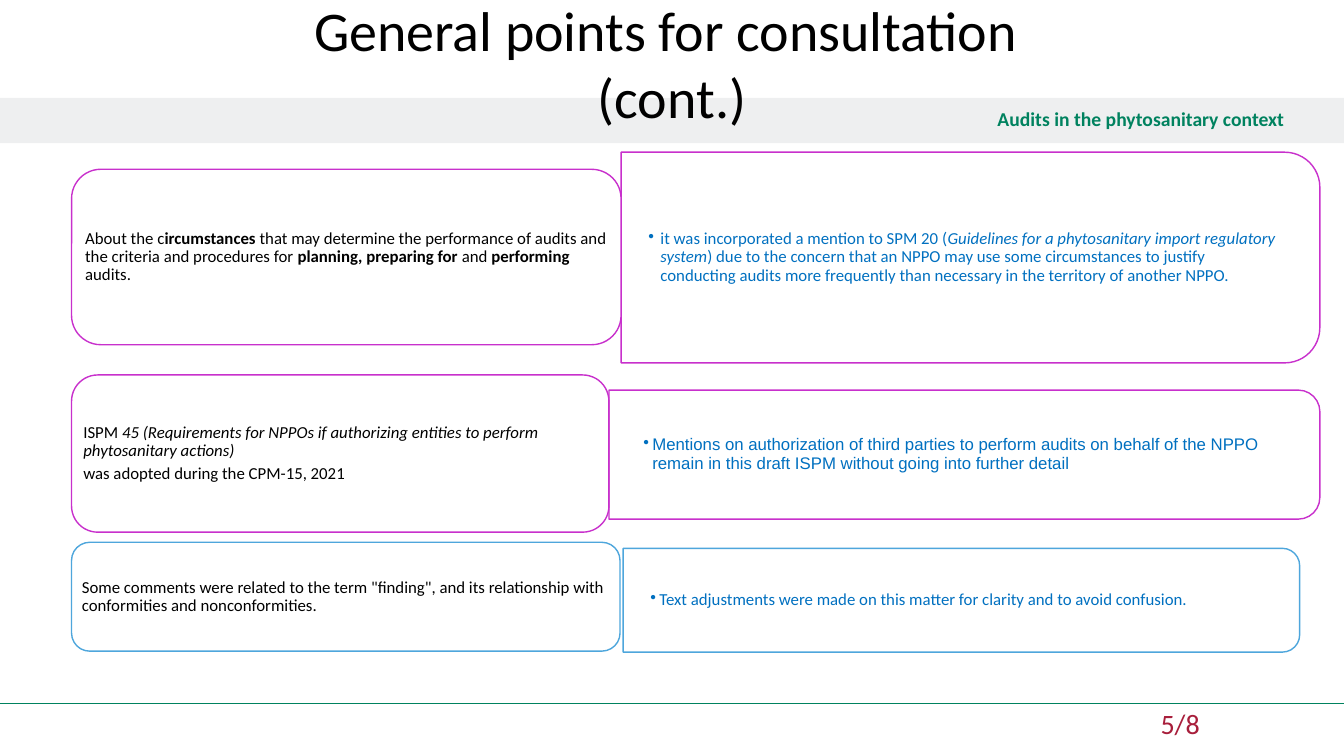
import pptx
import pptx.dml.color
import pptx.enum.shapes
import pptx.enum.text
import pptx.oxml
import pptx.oxml.ns
import pptx.util
from pptx.util import Inches

RGBColor = pptx.dml.color.RGBColor
MSO_SHAPE = pptx.enum.shapes.MSO_SHAPE
MSO_ANCHOR = pptx.enum.text.MSO_ANCHOR
MSO_AUTO_SIZE = pptx.enum.text.MSO_AUTO_SIZE
PP_ALIGN = pptx.enum.text.PP_ALIGN

WHITE = RGBColor(0xFF, 0xFF, 0xFF)
BLACK = RGBColor(0x00, 0x00, 0x00)
GREEN = RGBColor(0x00, 0x82, 0x5F)
GREY = RGBColor(0xD8, 0xD9, 0xDC)
CRIMSON = RGBColor(0xA8, 0x1E, 0x3B)
PURPLE = RGBColor(0xC8, 0x30, 0xCC)
SKY = RGBColor(0x4E, 0xA6, 0xDC)
BLUE = RGBColor(0x00, 0x70, 0xC0)

SLIDE_WIDTH, SLIDE_HEIGHT = 13.33, 7.5
CORNER_INSET = 0.0488

ROWS = [
    {
        "line": PURPLE,
        "topic_box": (0.71, 1.68, 5.45, 1.74),
        "topic_margins": (0.05, 0.03),
        "topic": [[
            ("About the c", ""), ("ircumstances ", "b"),
            ("that may determine the performance of audits and the criteria and procedures for ", ""),
            ("planning, preparing for", "b"), (" and ", ""), ("performing ", "b"), ("audits.", ""),
        ]],
        "reply_box": (6.16, 1.51, 6.93, 2.09),
        "reply_margins": (0.27, 0.14),
        "indent": (0.12, -0.12),
        "font": "Calibri",
        "reply": [[
            ("it was incorporated a mention to SPM 20 (", ""),
            ("Guidelines for a phytosanitary import regulatory system", "i"),
            (") due to the concern that an NPPO may use some circumstances to justify conducting "
             "audits more frequently than necessary in the territory of another NPPO.", ""),
        ]],
    },
    {
        "line": PURPLE,
        "topic_box": (0.71, 3.72, 5.33, 1.56),
        "topic_margins": (0.04, 0.02),
        "topic": [
            [("ISPM", ""),
             (" 45 (Requirements for NPPOs if authorizing entities to perform phytosanitary actions)", "i")],
            [("was adopted during the CPM-15, 2021", "")],
        ],
        "reply_box": (6.04, 3.87, 7.05, 1.28),
        "reply_margins": (0.04, 0.02),
        "indent": (0.39, -0.09),
        "font": "Arial",
        "reply": [[("Mentions on authorization of third parties to perform audits on behalf of the NPPO "
                    "remain in this draft ISPM without going into further detail", "")]],
    },
    {
        "line": SKY,
        "topic_box": (0.71, 5.38, 5.44, 1.08),
        "topic_margins": (0.05, 0.03),
        "topic": [[("Some comments were related to the term \"finding\", and its relationship with "
                    "conformities and nonconformities.", "")]],
        "reply_box": (6.18, 5.44, 6.71, 1.03),
        "reply_margins": (0.27, 0.14),
        "indent": (0.09, -0.09),
        "font": "Calibri",
        "reply": [[("Text adjustments were made on this matter for clarity and to avoid confusion.", "")]],
    },
]


def set_frame(shape, margins, anchor=MSO_ANCHOR.MIDDLE):
    """Wrap the text of a shape and set its left, top, right and bottom margins."""
    frame = shape.text_frame
    frame.word_wrap = True
    frame.auto_size = MSO_AUTO_SIZE.NONE
    frame.vertical_anchor = anchor
    frame.margin_left, frame.margin_top, frame.margin_right, frame.margin_bottom = map(Inches, margins)
    return frame


def add_run(paragraph, text, size, color, font="Calibri", style=""):
    """Add one formatted run; style is b for bold, i for italic."""
    run = paragraph.add_run()
    run.text = text
    run.font.name = font
    run.font.size = pptx.util.Pt(size)
    run.font.color.rgb = color
    run.font.bold = style == "b"
    run.font.italic = style == "i"


def add_panel(slide, preset, box, line):
    """Add a white outlined panel."""
    shape = slide.shapes.add_shape(preset, *map(Inches, box))
    shape.shadow.inherit = False
    shape.fill.solid()
    shape.fill.fore_color.rgb = WHITE
    shape.line.color.rgb = line
    shape.line.width = pptx.util.Pt(1)
    return shape


def add_passage(slide, box, margins, paragraphs, color, space_after, font="Calibri", indent=None):
    """Add a text box of paragraphs, bulleted when an indent is given."""
    shape = slide.shapes.add_textbox(*map(Inches, box))
    frame = set_frame(shape, margins * 2)
    for index, runs in enumerate(paragraphs):
        paragraph = frame.add_paragraph() if index else frame.paragraphs[0]
        paragraph.line_spacing = 0.9
        paragraph.space_after = pptx.util.Pt(space_after)
        if indent:
            paragraph.level = 1
            properties = paragraph._p.get_or_add_pPr()
            properties.set("marL", str(Inches(indent[0])))
            properties.set("indent", str(Inches(indent[1])))
            bullet = pptx.oxml.ns.qn("a:buChar")
            properties.append(properties.makeelement(bullet, {"char": "•"}))
        for text, style in runs:
            add_run(paragraph, text, 12, color, font, style)


def add_topic(slide, row):
    """Add the rounded panel and text on the left of a row."""
    left, top, width, height = row["topic_box"]
    add_panel(slide, MSO_SHAPE.ROUNDED_RECTANGLE, row["topic_box"], row["line"])
    inset = CORNER_INSET * height
    text_box = (left + inset, top + inset, width - 2 * inset, height - 2 * inset)
    add_passage(slide, text_box, row["topic_margins"], row["topic"], BLACK, 4)


def add_reply(slide, row):
    """Add the panel with rounded right corners and its bullet."""
    left, top, width, height = row["reply_box"]
    shift = (width - height) / 2
    turned_box = (left + shift, top - shift, height, width)
    panel = add_panel(slide, MSO_SHAPE.ROUND_2_SAME_RECTANGLE, turned_box, row["line"])
    panel.rotation = 90
    inset = CORNER_INSET * height
    text_box = (left, top + inset, width - inset, height - 2 * inset)
    add_passage(slide, text_box, row["reply_margins"], row["reply"], BLUE, 2, row["font"], row["indent"])


def add_band(slide, box):
    """Add the translucent band with the name of the subject."""
    band = slide.shapes.add_shape(MSO_SHAPE.RECTANGLE, *map(Inches, box))
    band.shadow.inherit = False
    band.fill.solid()
    band.fill.fore_color.rgb = GREY
    band.line.fill.background()
    color = band._element.spPr.find(".//" + pptx.oxml.ns.qn("a:srgbClr"))
    color.append(color.makeelement(pptx.oxml.ns.qn("a:alpha"), {"val": "42000"}))
    paragraph = set_frame(band, (0.59, 0.05, 0.59, 0.05)).paragraphs[0]
    paragraph.alignment = PP_ALIGN.RIGHT
    paragraph.line_spacing = 0.9
    add_run(paragraph, "Audits in the phytosanitary context", 14, GREEN, style="b")


def add_footer(slide, top):
    """Add the footer rule and the page count below it."""
    rule = slide.shapes.add_connector(
        pptx.enum.shapes.MSO_CONNECTOR.STRAIGHT, 0, Inches(top), Inches(SLIDE_WIDTH), Inches(top))
    rule.line.color.rgb = GREEN
    rule.line.width = pptx.util.Pt(1)
    properties = rule._element.spPr
    properties.append(properties.makeelement(pptx.oxml.ns.qn("a:effectLst"), {}))
    count = slide.shapes.add_textbox(Inches(10.92), Inches(top + 0.03), Inches(2.41), Inches(0.39))
    frame = set_frame(count, (0.59, 0, 0.39, 0.05), MSO_ANCHOR.TOP)
    add_run(frame.paragraphs[0], "5/8", 20, CRIMSON)


def place_title(slide, box):
    """Put the title in its box, in front of the band."""
    title = slide.shapes.title
    title.left, title.top, title.width, title.height = map(Inches, box)
    paragraph = set_frame(title, (0.1, 0.05, 0.1, 0.05)).paragraphs[0]
    paragraph.alignment = PP_ALIGN.CENTER
    add_run(paragraph, "General points for consultation ", 40, BLACK)
    paragraph.add_line_break()
    add_run(paragraph, "(cont.)", 40, BLACK)
    title._element.getparent().append(title._element)


def main():
    """Build the slide and save it."""
    presentation = pptx.Presentation()
    presentation.slide_width, presentation.slide_height = Inches(SLIDE_WIDTH), Inches(SLIDE_HEIGHT)
    slide = presentation.slides.add_slide(presentation.slide_layouts[5])
    add_footer(slide, 6.98)
    add_band(slide, (0, 0.97, SLIDE_WIDTH, 0.45))
    for row in ROWS:
        add_reply(slide, row)
        add_topic(slide, row)
    place_title(slide, (0, 0, SLIDE_WIDTH, 1.25))
    presentation.save("out.pptx")


if __name__ == "__main__":
    main()
